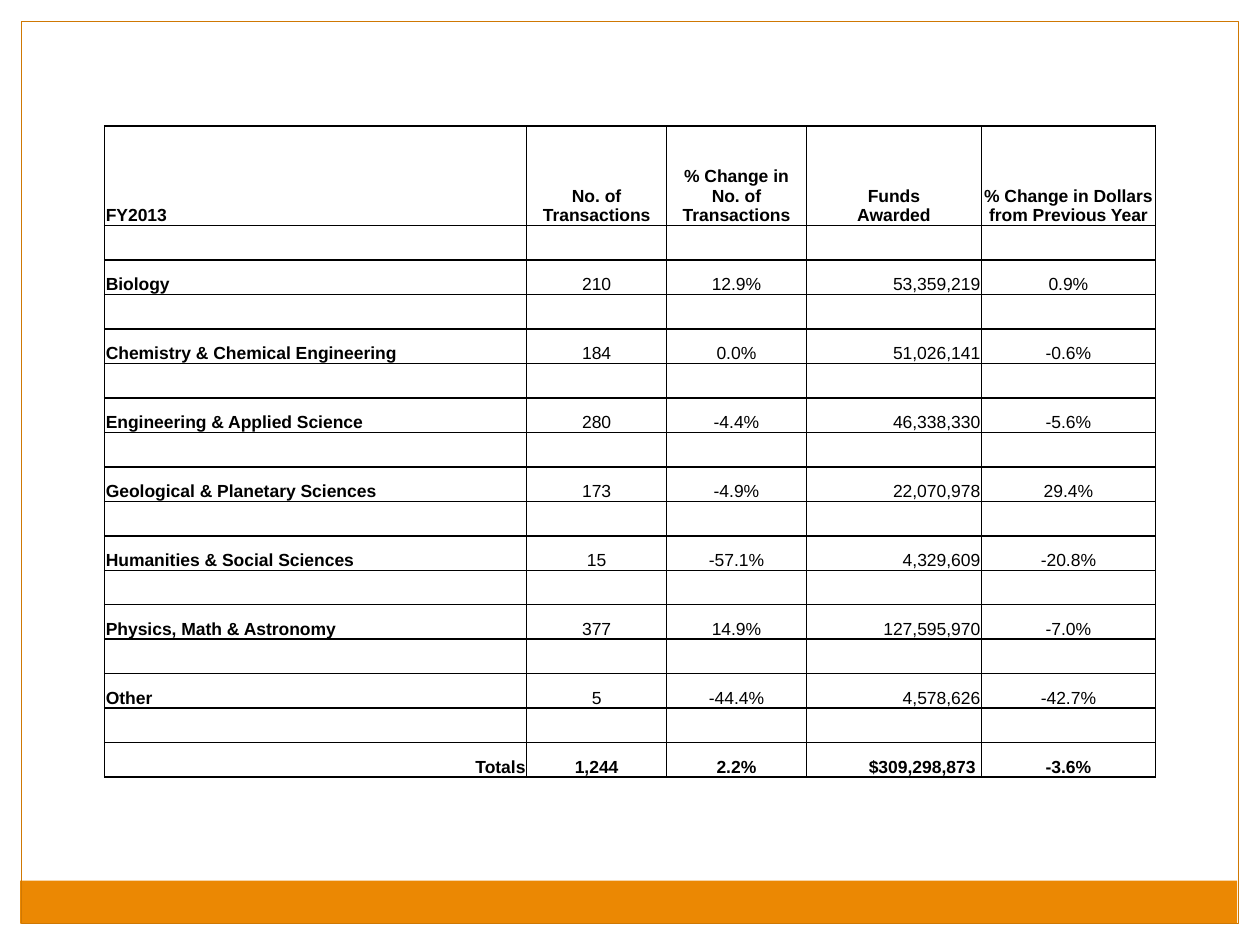
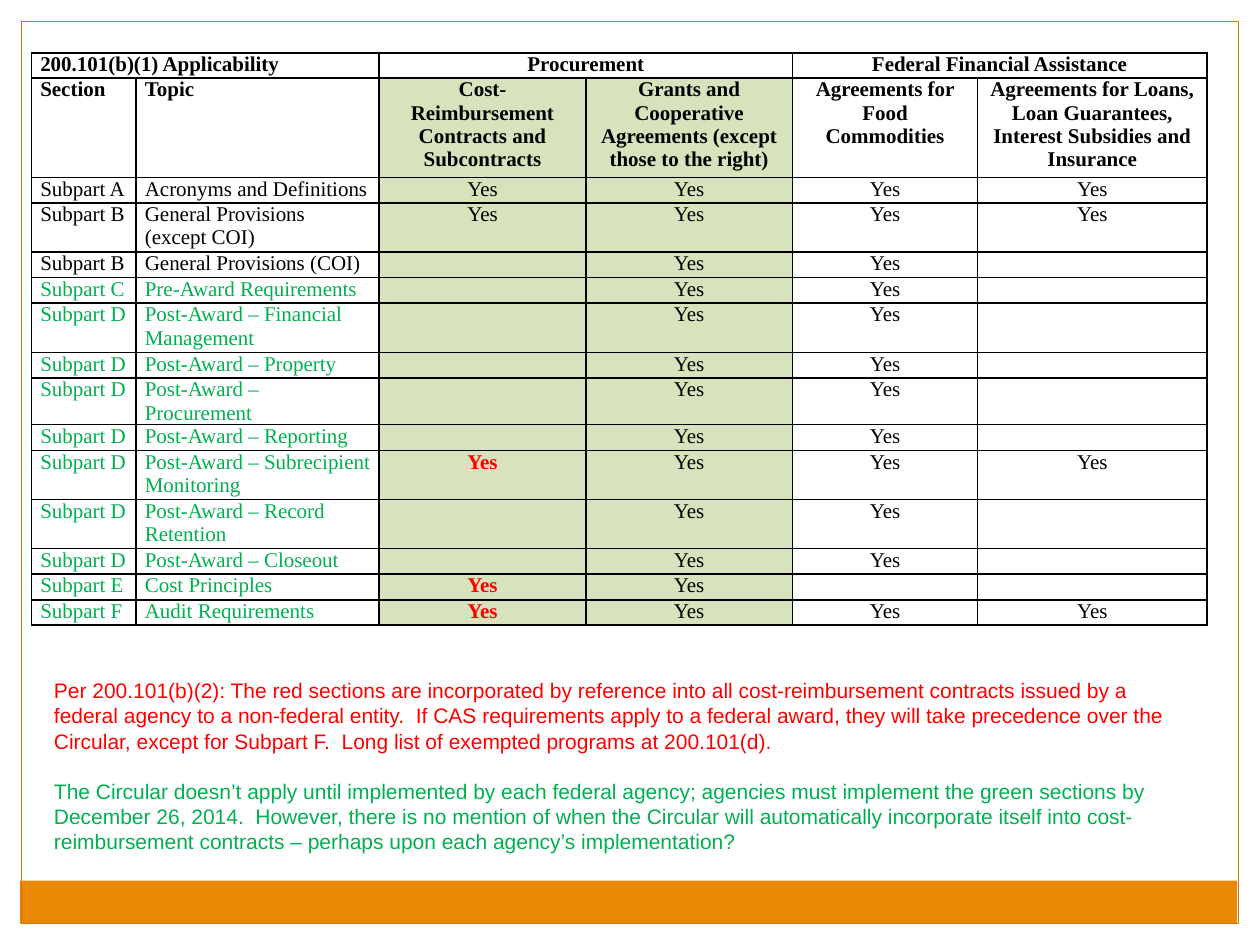
import lxml.etree
import pptx
import pptx.dml.color
import pptx.enum.shapes
import pptx.enum.text
import pptx.oxml.ns
import pptx.util

Inches = pptx.util.Inches
Align = pptx.enum.text.PP_ALIGN
Anchor = pptx.enum.text.MSO_ANCHOR
qn = pptx.oxml.ns.qn

COLORS = {
    "white": "FFFFFF", "black": "000000", "band": "EB8803", "frame": "CF7803",
    "shade": "D6E3BC", "green": "00B050", "red": "FF0000",
}


def rgb(name):
    return pptx.dml.color.RGBColor.from_string(COLORS[name])


def write_text(para, text, font="Arial", size=12, color="black", bold=False, align=Align.LEFT):
    para.alignment = align
    if not text:
        # An empty cell keeps its row low through its end mark
        lxml.etree.SubElement(para._p, qn("a:endParaRPr"), sz=str(size * 100))
        return
    for index, line in enumerate(text.split("\n")):
        if index:
            para.add_line_break()
        span = para.add_run()
        span.text = line
        span.font.name = font
        span.font.size = pptx.util.Pt(size)
        span.font.bold = bold
        span.font.color.rgb = rgb(color)


deck = pptx.Presentation()
deck.slide_width, deck.slide_height = Inches(10), Inches(7.5)

# Both pages: white margins, orange band, outline
BANDS = [
    (0, 0, 10, 0.17, "white"),
    (9.83, 0, 0.17, 7.5, "white"),
    (0, 0, 0.17, 7.5, "white"),
    (0.16, 6.99, 9.66, 0.34, "band"),
    (0.17, 0.17, 9.66, 7.16, None),
]
pages = []
for number in range(2):
    page = deck.slides.add_slide(deck.slide_layouts[6])
    for left, top, width, height, color in BANDS:
        box = page.shapes.add_shape(
            pptx.enum.shapes.MSO_SHAPE.RECTANGLE,
            Inches(left), Inches(top), Inches(width), Inches(height))
        box.shadow.inherit = False
        if color:
            box.fill.solid()
            box.fill.fore_color.rgb = rgb(color)
            box.line.fill.background()
        else:
            box.fill.background()
            box.line.color.rgb = rgb("frame")
            box.line.width = pptx.util.Pt(0.75)
    pages.append(page)

# Awards by division
award_header = [
    "FY2013", "No. of Transactions", "% Change in No. of Transactions",
    "Funds\nAwarded", "% Change in Dollars from Previous Year",
]
award_lines = [
    ["Biology", "210", "12.9%", "53,359,219", "0.9%"],
    ["Chemistry & Chemical Engineering", "184", "0.0%", "51,026,141", "-0.6%"],
    ["Engineering & Applied Science", "280", "-4.4%", "46,338,330", "-5.6%"],
    ["Geological & Planetary Sciences", "173", "-4.9%", "22,070,978", "29.4%"],
    ["Humanities & Social Sciences", "15", "-57.1%", "4,329,609", "-20.8%"],
    ["Physics, Math & Astronomy", "377", "14.9%", "127,595,970", "-7.0%"],
    ["Other", "5", "-44.4%", "4,578,626", "-42.7%"],
    ["Totals", "1,244", "2.2%", "$309,298,873 ", "-3.6%"],
]
award_rows = [award_header]
for line in award_lines:
    award_rows += [[""] * 5, line]
award_heights = [0.79] + [(5.17 - 0.79) / 16] * 16

# Applicability of each subpart; the last item marks the columns that say yes
topics = [
    ("A", "Acronyms and Definitions", "YYYY"),
    ("B", "General Provisions (except COI)", "YYYY"),
    ("B", "General Provisions (COI)", "-YY-"),
    ("C", "Pre-Award Requirements", "-YY-"),
    ("D", "Post-Award – Financial Management", "-YY-"),
    ("D", "Post-Award – Property", "-YY-"),
    ("D", "Post-Award – Procurement", "-YY-"),
    ("D", "Post-Award – Reporting", "-YY-"),
    ("D", "Post-Award – Subrecipient Monitoring", "YYYY"),
    ("D", "Post-Award – Record Retention", "-YY-"),
    ("D", "Post-Award – Closeout", "-YY-"),
    ("E", "Cost Principles", "YY--"),
    ("F", "Audit Requirements", "YYYY"),
]
topic_rows = [
    ["200.101(b)(1) Applicability", "", "Procurement", "", "Federal Financial Assistance", ""],
    ["Section", "Topic", "Cost-Reimbursement Contracts and Subcontracts",
     "Grants and Cooperative Agreements (except those to the right)",
     "Agreements for Food Commodities",
     "Agreements for Loans, Loan Guarantees, Interest Subsidies and Insurance"],
]
for letter, topic, marks in topics:
    answers = ["Yes" if mark == "Y" else "" for mark in marks]
    topic_rows.append(["Subpart " + letter, topic] + answers)
topic_heights = [0.2] * len(topic_rows)
topic_heights[1] = 0.79
for tall_row in (3, 6, 10, 11):
    topic_heights[tall_row] = 0.39


def add_grid(page, left, top, widths, heights, rows, insets, anchor, cell_format):
    """Draw a bordered table; cell_format gives the text format and fill of a cell."""
    frame = page.shapes.add_table(
        len(rows), len(widths), Inches(left), Inches(top),
        Inches(sum(widths)), Inches(sum(heights)))
    grid = frame.table
    grid.first_row = grid.horz_banding = False
    for column, width in zip(grid.columns, widths):
        column.width = Inches(width)
    for row, height in zip(grid.rows, heights):
        row.height = Inches(height)
    for r, texts in enumerate(rows):
        for c, text in enumerate(texts):
            cell = grid.cell(r, c)
            cell.margin_left = cell.margin_right = Inches(insets[0])
            cell.margin_top, cell.margin_bottom = Inches(insets[1]), 0
            cell.vertical_anchor = anchor
            text_format, fill = cell_format(r, c)
            write_text(cell.text_frame.paragraphs[0], text, **text_format)
            if fill:
                cell.fill.solid()
                cell.fill.fore_color.rgb = rgb(fill)
            else:
                cell.fill.background()
            properties = cell._tc.get_or_add_tcPr()
            for index, side in enumerate(("a:lnL", "a:lnR", "a:lnT", "a:lnB")):
                edge = lxml.etree.Element(qn(side), w="12700")
                solid = lxml.etree.SubElement(edge, qn("a:solidFill"))
                lxml.etree.SubElement(solid, qn("a:srgbClr"), val=COLORS["black"])
                properties.insert(index, edge)
    return grid


def award_format(r, c):
    last = len(award_rows) - 1
    align = Align.CENTER
    if c == 0:
        align = Align.RIGHT if r == last else Align.LEFT
    elif c == 3 and r > 0:
        align = Align.RIGHT
    return dict(size=10, bold=r in (0, last) or c == 0, align=align), None


def topic_format(r, c):
    # Subparts C to F are green; their yes for cost-reimbursement is red
    color, bold = "black", r < 2
    if r > 4 and c < 2:
        color = "green"
    elif r > 4 and c == 2:
        color, bold = "red", True
    align = Align.LEFT if c < 2 else Align.CENTER
    fill = "shade" if r > 0 and c in (2, 3) else None
    return dict(font="Times New Roman", color=color, bold=bold, align=align), fill


# Page 1: awards table
add_grid(pages[0], 0.83, 1, [3.35, 1.11, 1.11, 1.39, 1.38], award_heights,
         award_rows, (0.01, 0.01), Anchor.BOTTOM, award_format)

# Page 2: applicability table with paired headings
applicability = add_grid(
    pages[1], 0.25, 0.42, [0.83, 1.93, 1.64, 1.64, 1.47, 1.82], topic_heights,
    topic_rows, (0.07, 0), Anchor.TOP, topic_format)
for c in (0, 2, 4):
    applicability.cell(0, c).merge(applicability.cell(0, c + 1))

# Page 2: remarks under the table
remarks = [
    ("red", "Per 200.101(b)(2): The red sections are incorporated by reference into all "
     "cost-reimbursement contracts issued by a federal agency to a non-federal entity.  "
     "If CAS requirements apply to a federal award, they will take precedence over the "
     "Circular, except for Subpart F.  Long list of exempted programs at 200.101(d)."),
    ("green", "The Circular doesn’t apply until implemented by each federal agency; agencies "
     "must implement the green sections by December 26, 2014.  However, there is no mention "
     "of when the Circular will automatically incorporate itself into cost-reimbursement "
     "contracts – perhaps upon each agency’s implementation?"),
]
box = pages[1].shapes.add_textbox(Inches(0.33), Inches(5.33), Inches(9.25), Inches(1.51))
box.text_frame.word_wrap = True
for index, (color, text) in enumerate(remarks):
    para = box.text_frame.add_paragraph() if index else box.text_frame.paragraphs[0]
    para.line_spacing = pptx.util.Pt(14.4)
    para.space_before = pptx.util.Pt(14.4 * index)
    write_text(para, text, color=color)

deck.save("out.pptx")
